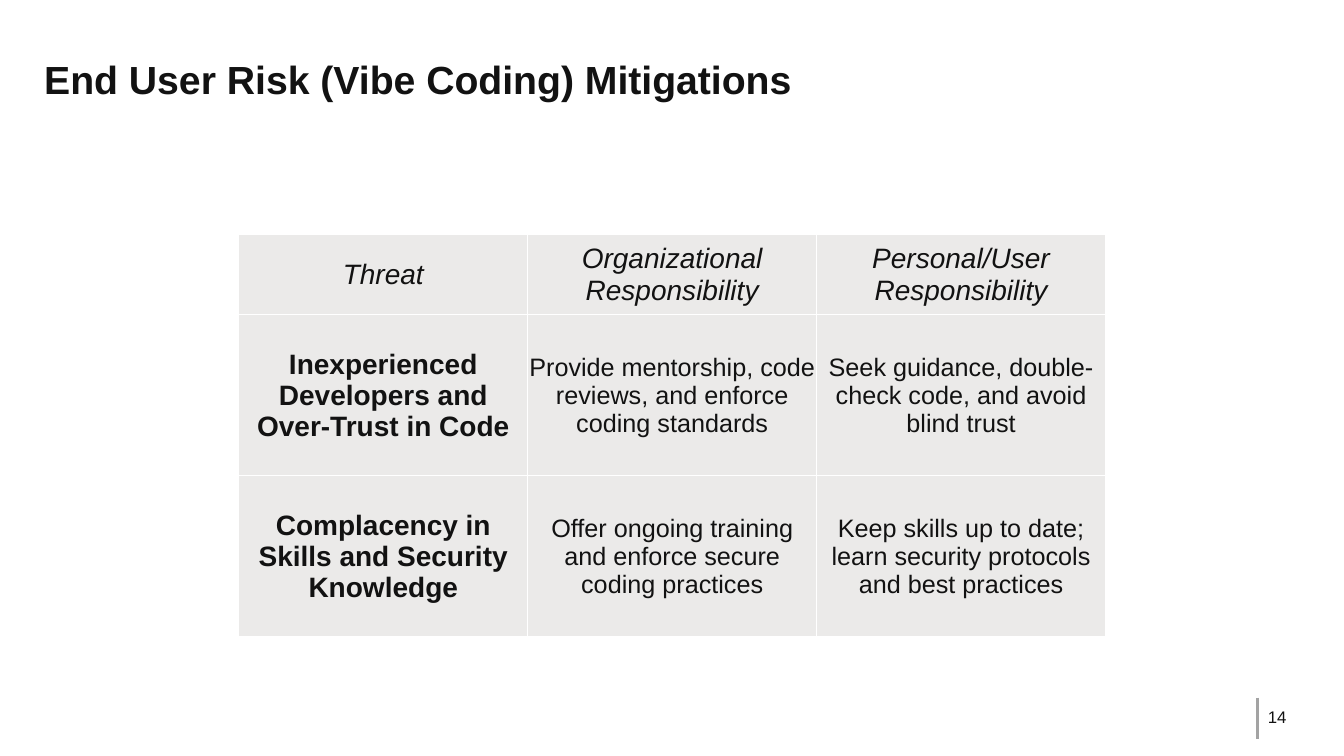
import pptx
import pptx.util
import pptx.dml.color
import pptx.enum.shapes
import pptx.enum.text
import pptx.oxml
import pptx.oxml.ns
from pptx.util import Cm

COLORS = {"text": "121212", "cell": "EBEAE9", "edge": "FFFFFF", "rule": "A3A3A3"}
FONT = "Arial"
MID = pptx.enum.text.MSO_ANCHOR.MIDDLE

ROWS = [
    ("Threat", "Organizational Responsibility", "Personal/User Responsibility"),
    ("Inexperienced Developers and Over-Trust in Code",
     "Provide mentorship, code reviews, and enforce coding standards",
     "Seek guidance, double-check code, and avoid blind trust"),
    ("Complacency in Skills and Security Knowledge",
     "Offer ongoing training and enforce secure coding practices",
     "Keep skills up to date; learn security protocols and best practices"),
]


def color(name):
    return pptx.dml.color.RGBColor.from_string(COLORS[name])


def style(para, size, bold=False, slant=False, center=False):
    align = pptx.enum.text.PP_ALIGN
    para.alignment = align.CENTER if center else align.LEFT
    font = para.font
    font.name, font.size = FONT, pptx.util.Pt(size)
    font.bold, font.italic = bold, slant
    font.color.rgb = color("text")


def add_title(slide, text):
    title = slide.shapes.title
    title.left, title.top = Cm(0.86), Cm(0.86)
    title.width, title.height = Cm(32.13), Cm(2.26)
    frame = title.text_frame
    frame.text = text
    frame.auto_size = pptx.enum.text.MSO_AUTO_SIZE.NONE
    frame.vertical_anchor = MID
    style(frame.paragraphs[0], 28, bold=True)


def add_edges(cell):
    props = cell._tc.get_or_add_tcPr()
    for at, side in enumerate(("lnL", "lnR", "lnT", "lnB")):
        edge = pptx.oxml.parse_xml(
            f'<a:{side} {pptx.oxml.ns.nsdecls("a")} w="12700"><a:solidFill>'
            f'<a:srgbClr val="{COLORS["edge"]}"/></a:solidFill></a:{side}>')
        props.insert(at, edge)


def fill_cell(cell, text, head, first):
    cell.fill.solid()
    cell.fill.fore_color.rgb = color("cell")
    cell.vertical_anchor = MID
    cell.margin_left = cell.margin_right = cell.margin_top = Cm(0.02)
    cell.margin_bottom = 0
    cell.text = text
    style(cell.text_frame.paragraphs[0], 20 if head or first else 18,
          bold=first and not head, slant=head, center=True)
    add_edges(cell)


def add_grid(slide, rows):
    wide, high = Cm(7.28), (Cm(2.03), Cm(4.06), Cm(4.06))
    count = len(rows[0])
    grid = slide.shapes.add_table(len(rows), count, Cm(6.02), Cm(5.9),
                                  wide * count, sum(high)).table
    grid.first_row = grid.horz_banding = False
    for col in grid.columns:
        col.width = wide
    for r, row in enumerate(rows):
        grid.rows[r].height = high[r]
        for c, text in enumerate(row):
            fill_cell(grid.cell(r, c), text, r == 0, c == 0)


def add_rule(slide, x, top, end):
    kind = pptx.enum.shapes.MSO_CONNECTOR.STRAIGHT
    rule = slide.shapes.add_connector(kind, x, top, x, end)
    rule.line.color.rgb = color("rule")
    rule.line.width = pptx.util.Pt(2)
    props = rule._element.spPr
    props.append(pptx.oxml.parse_xml(
        f'<a:effectLst {pptx.oxml.ns.nsdecls("a")}/>'))


def add_page(slide, text):
    box = slide.shapes.add_textbox(Cm(31.7), Cm(17.73), Cm(1.32), Cm(0.69))
    frame = box.text_frame
    frame.word_wrap = True
    frame.vertical_anchor = MID
    frame.text = text
    style(frame.paragraphs[0], 12)


def main():
    deck = pptx.Presentation()
    deck.slide_width, deck.slide_height = Cm(33.87), Cm(19.05)
    slide = deck.slides.add_slide(deck.slide_layouts[5])

    # Page number and its rule
    add_page(slide, "14")
    add_rule(slide, Cm(31.7), Cm(17.58), Cm(18.62))

    # Title and table
    add_title(slide, "End User Risk (Vibe Coding) Mitigations")
    add_grid(slide, ROWS)

    deck.save("out.pptx")


if __name__ == "__main__":
    main()
